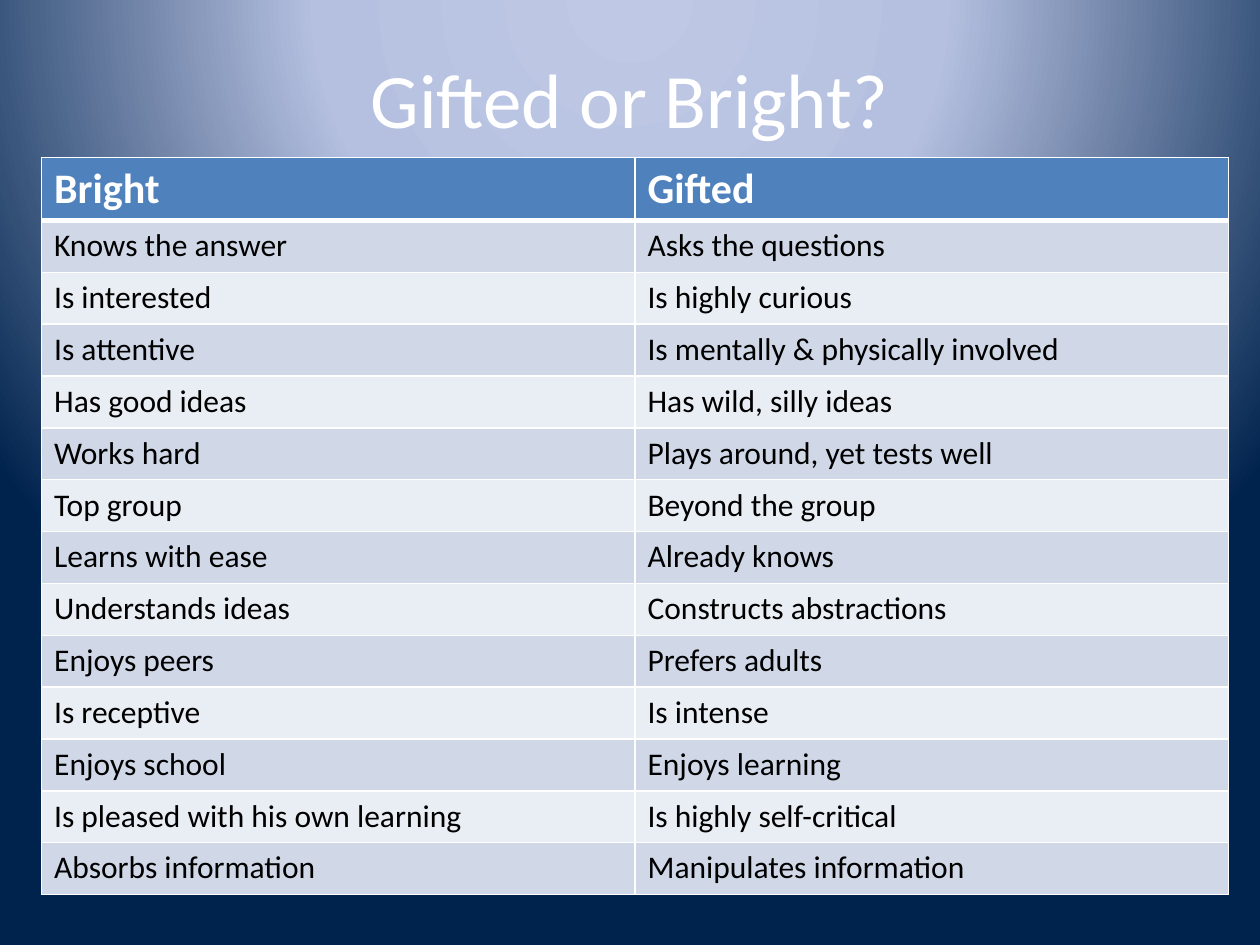
from lxml import etree
from pptx import Presentation
from pptx.dml.color import RGBColor
from pptx.enum.text import MSO_ANCHOR, PP_ALIGN
from pptx.oxml import parse_xml
from pptx.oxml.ns import nsdecls
from pptx.util import Inches, Pt

TITLE = "Gifted or Bright?"
HEADINGS = ("Bright", "Gifted")
TRAITS = [
    ("Knows the answer", "Asks the questions"),
    ("Is interested", "Is highly curious"),
    ("Is attentive", "Is mentally & physically involved"),
    ("Has good ideas", "Has wild, silly ideas"),
    ("Works hard", "Plays around, yet tests well"),
    ("Top group", "Beyond the group"),
    ("Learns with ease", "Already knows"),
    ("Understands ideas", "Constructs abstractions"),
    ("Enjoys peers", "Prefers adults"),
    ("Is receptive", "Is intense"),
    ("Enjoys school", "Enjoys learning"),
    ("Is pleased with his own learning", "Is highly self-critical"),
    ("Absorbs information", "Manipulates information"),
]

FONT = "Calibri"
WHITE = RGBColor(0xFF, 0xFF, 0xFF)
BLACK = RGBColor(0x00, 0x00, 0x00)
HEADER_BLUE = RGBColor(0x4F, 0x81, 0xBD)
BANDS = (RGBColor(0xD0, 0xD8, 0xE8), RGBColor(0xE9, 0xED, 0xF4))
GLOW = [
    (0, RGBColor(0xBF, 0xC9, 0xE5)),
    (40, RGBColor(0xB5, 0xC0, 0xE0)),
    (100, RGBColor(0x00, 0x23, 0x4D)),
]

PAGE_WIDTH, PAGE_HEIGHT = Inches(10), Inches(7.5)
TABLE_LEFT, TABLE_TOP = Inches(0.33), Inches(1.25)
TABLE_WIDTH, TABLE_HEIGHT = Inches(9.42), Inches(5.85)
HEADER_HEIGHT = Inches(0.5)


def paint_background(page):
    """Fill the page with a circular glow centred above its top edge."""
    page.background.fill.gradient()
    properties = page.background._cSld.bg.bgPr
    stops = "".join(
        f'<a:gs pos="{share * 1000}"><a:srgbClr val="{color}"/></a:gs>'
        for share, color in GLOW
    )
    glow = parse_xml(
        f'<a:gradFill {nsdecls("a")} rotWithShape="1"><a:gsLst>{stops}</a:gsLst>'
        '<a:path path="circle">'
        '<a:fillToRect l="50000" t="-80000" r="50000" b="180000"/>'
        "</a:path></a:gradFill>"
    )
    properties.replace(properties[0], glow)


def style_text(para, size, color, bold=False):
    font = para.runs[0].font
    font.name, font.size, font.bold = FONT, Pt(size), bold
    font.color.rgb = color


def add_borders(cell, top, bottom):
    """Draw white borders, with the top and bottom widths in points."""
    properties = cell._tc.get_or_add_tcPr()
    widths = {"lnL": 1, "lnR": 1, "lnT": top, "lnB": bottom}
    for place, (tag, width) in enumerate(widths.items()):
        line = parse_xml(
            f'<a:{tag} {nsdecls("a")} w="{Pt(width)}"><a:solidFill>'
            f'<a:srgbClr val="{WHITE}"/></a:solidFill></a:{tag}>'
        )
        properties.insert(place, line)


def add_title(page):
    box = page.shapes.add_textbox(
        Inches(0.5), Inches(0.3), Inches(9), Inches(0.95)
    )
    frame = box.text_frame
    frame.word_wrap = True
    frame.vertical_anchor = MSO_ANCHOR.MIDDLE
    frame.text = TITLE
    para = frame.paragraphs[0]
    para.alignment = PP_ALIGN.CENTER
    style_text(para, 44, WHITE)


def add_comparison(page):
    rows = [HEADINGS] + TRAITS
    table = page.shapes.add_table(
        len(rows), len(HEADINGS), TABLE_LEFT, TABLE_TOP, TABLE_WIDTH, TABLE_HEIGHT
    ).table
    body_height = (TABLE_HEIGHT - HEADER_HEIGHT) // len(TRAITS)
    for column in table.columns:
        column.width = TABLE_WIDTH // len(HEADINGS)
    for index, texts in enumerate(rows):
        header = index == 0
        table.rows[index].height = HEADER_HEIGHT if header else body_height
        for column, text in enumerate(texts):
            cell = table.cell(index, column)
            cell.text = text
            cell.fill.solid()
            cell.fill.fore_color.rgb = HEADER_BLUE if header else BANDS[(index - 1) % 2]
            add_borders(cell, top=3 if index == 1 else 1, bottom=3 if header else 1)
            style_text(
                cell.text_frame.paragraphs[0],
                24 if header else 18,
                WHITE if header else BLACK,
                bold=header,
            )


def main():
    deck = Presentation()
    deck.slide_width, deck.slide_height = PAGE_WIDTH, PAGE_HEIGHT
    page = deck.slides.add_slide(deck.slide_layouts[6])
    paint_background(page)
    add_title(page)
    add_comparison(page)
    deck.save("out.pptx")


if __name__ == "__main__":
    main()
